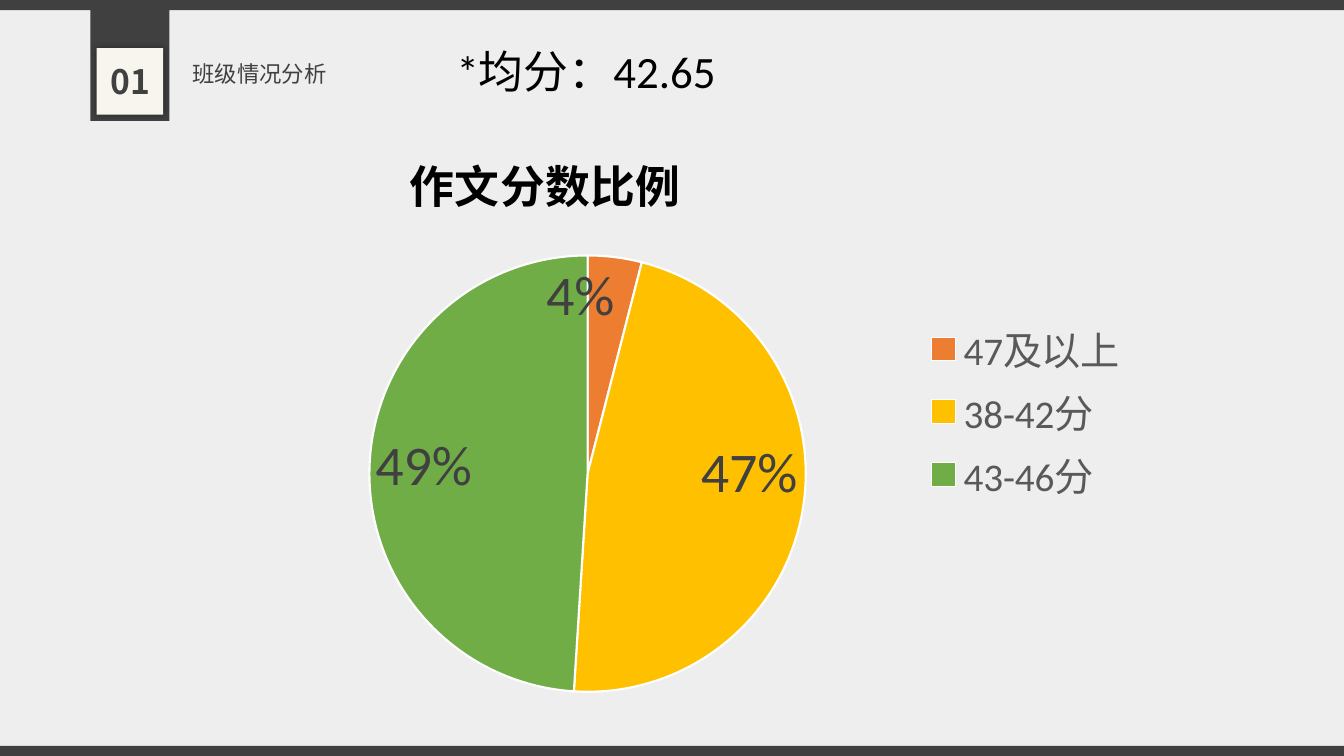
from lxml.etree import SubElement
from pptx import Presentation
from pptx.chart.data import CategoryChartData
from pptx.dml.color import RGBColor
from pptx.enum.chart import XL_CHART_TYPE, XL_LABEL_POSITION, XL_LEGEND_POSITION
from pptx.enum.shapes import MSO_SHAPE
from pptx.enum.text import MSO_ANCHOR, PP_ALIGN
from pptx.oxml import parse_xml
from pptx.oxml.ns import nsdecls, qn
from pptx.util import Pt

SECTION_NUMBER = "01"
SECTION_TITLE = "班级情况分析"
AVERAGE = "*均分：42.65"
CHART_TITLE = "作文分数比例"
SCORES = [("47及以上", 4, "orange"), ("38-42分", 47, "yellow"), ("43-46分", 49, "green")]

COLORS = {
    "paper": "EEEEEE", "dark": "404040", "cream": "F7F5ED", "black": "000000",
    "grey": "595959", "white": "FFFFFF",
    "orange": "ED7D31", "yellow": "FFC000", "green": "70AD47",
}
CJK_FONT, LATIN_FONT = "Noto Sans CJK SC", "Calibri"
WIDTH, HEIGHT, BAR_HEIGHT = 960, 540, 7.2


def rgb(name):
    return RGBColor.from_string(COLORS[name])


def style(font, name, size, color, bold=False):
    font.name, font.size, font.bold = name, Pt(size), bold
    font.color.rgb = rgb(color)


def place(shape, left, top, width, height):
    shape.left, shape.top = Pt(left), Pt(top)
    shape.width, shape.height = Pt(width), Pt(height)


def add_block(shapes, left, top, width, height, color):
    block = shapes.add_shape(MSO_SHAPE.RECTANGLE, Pt(left), Pt(top), Pt(width), Pt(height))
    block.shadow.inherit = False
    block.fill.solid()
    block.fill.fore_color.rgb = rgb(color)
    block.line.fill.background()
    return block


def add_glow_shadow(shape):
    """Give the shape a soft shadow spreading evenly on all sides."""
    effects = shape._element.spPr.find(qn("a:effectLst"))
    effects.append(parse_xml(
        f'<a:outerShdw {nsdecls("a")} blurRad="{Pt(5)}" dist="0" dir="0" algn="ctr" rotWithShape="0">'
        f'<a:srgbClr val="{COLORS["black"]}"><a:alpha val="40000"/></a:srgbClr></a:outerShdw>'))


def write(frame, text, name, size, color, bold=False):
    frame.word_wrap = True
    para = frame.paragraphs[0]
    para.text = text
    style(para.font, name, size, color, bold)
    return para


def set_layout(part, before, left, top, width=None, height=None):
    """Pin a chart part at fractions of the chart area, ahead of the child tagged before."""
    for old in part.findall(qn("c:layout")):
        part.remove(old)
    layout = parse_xml(f'<c:layout {nsdecls("c")}/>')
    manual = SubElement(layout, qn("c:manualLayout"))
    settings = [("xMode", "edge"), ("yMode", "edge"), ("x", left), ("y", top), ("w", width), ("h", height)]
    if before == "c:pieChart":
        settings.insert(0, ("layoutTarget", "inner"))
    for tag, value in settings:
        if value is not None:
            SubElement(manual, qn(f"c:{tag}")).set("val", str(value))
    part.find(qn(before)).addprevious(layout)


def add_score_chart(page):
    data = CategoryChartData()
    data.categories = [label for label, _, _ in SCORES]
    data.add_series("Series 1", [share for _, share, _ in SCORES])
    chart = page.shapes.add_chart(
        XL_CHART_TYPE.PIE, Pt(185.8), Pt(81.4), Pt(632.2), Pt(421.2), data).chart
    style(chart.font, LATIN_FONT, 10, "black")

    chart.has_title = True
    title = chart.chart_title
    title.include_in_layout = False
    title.text_frame.text = CHART_TITLE
    style(title.text_frame.paragraphs[0].runs[0].font, LATIN_FONT, 32, "black", True)
    set_layout(title._element, "c:overlay", 0.16, 0.04)

    chart.has_legend = True
    legend = chart.legend
    legend.position = XL_LEGEND_POSITION.RIGHT
    legend.include_in_layout = False
    style(legend.font, LATIN_FONT, 28, "grey")
    set_layout(legend._element, "c:overlay", 0.74, 0.34, 0.25, 0.33)

    plot = chart.plots[0]
    plot.vary_by_categories = True
    set_layout(plot._element.getparent(), "c:pieChart", 0.12, 0.24, 0.5, 0.74)
    for index, (_, _, color) in enumerate(SCORES):
        slice_format = plot.series[0].points[index].format
        slice_format.fill.solid()
        slice_format.fill.fore_color.rgb = rgb(color)
        slice_format.line.color.rgb = rgb("white")
        slice_format.line.width = Pt(1.5)

    plot.has_data_labels = True
    labels = plot.data_labels
    labels.show_percentage, labels.show_value = True, False
    labels.number_format, labels.number_format_is_linked = "0%", False
    labels.position = XL_LABEL_POSITION.INSIDE_END
    style(labels.font, LATIN_FONT, 40, "dark")


def main():
    deck = Presentation()
    deck.slide_width, deck.slide_height = Pt(WIDTH), Pt(HEIGHT)
    page = deck.slides.add_slide(deck.slide_layouts[5])
    page.background.fill.solid()
    page.background.fill.fore_color.rgb = rgb("paper")

    badge = page.shapes.add_group_shape()
    add_block(badge.shapes, 64.6, 0, 56.4, 86.4, "dark")
    add_glow_shadow(add_block(badge.shapes, 69.1, 34.4, 47.5, 47.5, "cream"))
    number = page.shapes.add_textbox(Pt(67), Pt(40.3), Pt(51.8), Pt(36))
    write(number.text_frame, SECTION_NUMBER, CJK_FONT, 24, "dark", True).alignment = PP_ALIGN.CENTER

    heading = page.shapes.title
    place(heading, 130.3, 25.2, 110.2, 41)
    heading.text_frame.vertical_anchor = MSO_ANCHOR.TOP
    para = write(heading.text_frame, SECTION_TITLE, CJK_FONT, 16, "dark")
    para.alignment, para.line_spacing = PP_ALIGN.LEFT, 1.75
    heading.text_frame.word_wrap = False

    for top in (0, HEIGHT - BAR_HEIGHT):
        add_block(page.shapes, 0, top, WIDTH, BAR_HEIGHT, "dark")

    add_score_chart(page)
    average = page.shapes.add_textbox(Pt(319), Pt(27.4), Pt(200.2), Pt(46))
    write(average.text_frame, AVERAGE, LATIN_FONT, 32, "black")
    deck.save("out.pptx")


if __name__ == "__main__":
    main()
